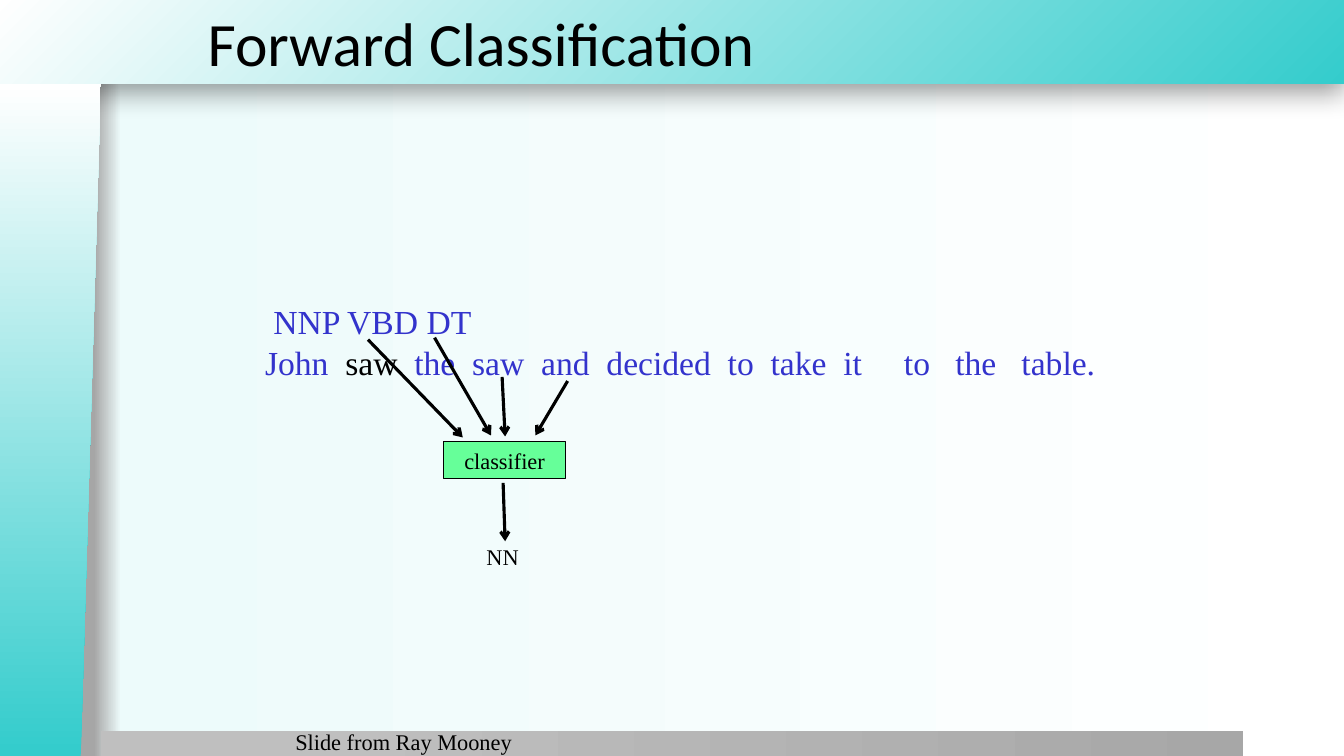
from lxml.etree import SubElement as Sub
from pptx import Presentation
from pptx.dml.color import RGBColor
from pptx.enum.shapes import MSO_CONNECTOR as Conn, MSO_SHAPE as Shape
from pptx.enum.text import MSO_ANCHOR as Anchor, MSO_AUTO_SIZE as Auto, PP_ALIGN as Align
from pptx.oxml.ns import qn
from pptx.util import Inches, Pt

BLACK, BLUE, TEAL, WHITE = "000000", "3333CC", "34CCCC", "FFFFFF"
SERIF, SANS = "Times New Roman", "Calibri"


def color(code):
    return RGBColor.from_string(code)


class Board:
    """Holds the current slide and its style."""

    def __init__(self, slide, font=SERIF, size=16):
        self.slide, self.shapes = slide, slide.shapes
        self.font, self.size = font, size

    def grade(self, fill, host, stops, focus=None):
        """Fill with a gradient; focus gives left and top of a round one."""
        fill.solid()
        solid = host.find(qn("a:solidFill"))
        grad = solid.makeelement(qn("a:gradFill"), {"rotWithShape": "1"})
        host.replace(solid, grad)
        row = Sub(grad, qn("a:gsLst"))
        for pos, code in stops:
            stop = Sub(row, qn("a:gs"), pos=str(pos * 1000))
            Sub(stop, qn("a:srgbClr"), val=code)
        if focus:
            ring = Sub(grad, qn("a:path"), {"path": "circle"})
            left, top = (str(n * 1000) for n in focus)
            Sub(ring, qn("a:fillToRect"), l=left, t=top)
        else:
            Sub(grad, qn("a:lin"), ang="0", scaled="0")

    def backdrop(self, stops):
        fill = self.slide.background.fill
        fill.solid()
        host = self.slide._element.find(".//" + qn("p:bgPr"))
        self.grade(fill, host, stops)

    def block(self, at, kind=Shape.RECTANGLE):
        box = self.shapes.add_shape(kind, *map(Inches, at))
        box.shadow.inherit = False
        box.line.fill.background()
        return box

    def band(self, at, stops, kind=Shape.RECTANGLE, focus=None):
        box = self.block(at, kind)
        self.grade(box.fill, box._element.spPr, stops, focus)
        return box

    def shade(self, box, alpha, blur, dist):
        """Drop a black shadow straight down."""
        effects = box._element.spPr.find(qn("a:effectLst"))
        drop = Sub(effects, qn("a:outerShdw"), blurRad=str(Pt(blur)),
                   dist=str(Pt(dist)), dir="5400000", rotWithShape="0")
        tone = Sub(drop, qn("a:srgbClr"), val=BLACK)
        Sub(tone, qn("a:alpha"), val=str(alpha * 1000))

    def letter(self, box, lines, size=None, font=None, align=Align.LEFT,
               anchor=Anchor.TOP, wrap=True):
        """Each line is a list of (text, color) pairs."""
        frame = box.text_frame
        frame.word_wrap, frame.auto_size = wrap, Auto.NONE
        frame.vertical_anchor = anchor
        for i, line in enumerate(lines):
            para = frame.add_paragraph() if i else frame.paragraphs[0]
            para.alignment = align
            for text, code in line:
                run = para.add_run()
                run.text = text
                run.font.name = font or self.font
                run.font.size = Pt(size or self.size)
                run.font.color.rgb = color(code)

    def text(self, at, lines, **style):
        self.letter(self.shapes.add_textbox(*map(Inches, at)), lines, **style)

    def node(self, at, label, fill):
        box = self.block(at)
        box.fill.solid()
        box.fill.fore_color.rgb = color(fill)
        box.line.color.rgb = color(BLACK)
        box.line.width = Pt(1)
        self.letter(box, [[(label, BLACK)]], align=Align.CENTER, anchor=Anchor.MIDDLE)

    def arrow(self, *ends):
        link = self.shapes.add_connector(Conn.STRAIGHT, *map(Inches, ends))
        link.line.color.rgb = color(BLACK)
        link.line.width = Pt(2.25)
        props = link._element.spPr
        Sub(props.find(qn("a:ln")), qn("a:tailEnd"), type="arrow")
        Sub(props, qn("a:effectLst"))


def main():
    deck = Presentation()
    deck.slide_width, deck.slide_height = Inches(13.33), Inches(7.5)
    board = Board(deck.slides.add_slide(deck.slide_layouts[6]))

    # Backdrop, header, footer and side bands
    board.backdrop([(7, "A6A6A6"), (9, "EDFBFB"), (100, WHITE)])
    head = board.band((-0.01, 0, 13.34, 0.83), [(0, TEAL), (100, WHITE)],
                      focus=(100, 100))
    board.shade(head, alpha=40, blur=20, dist=6)
    board.band((1, 7.25, 11.33, 0.26), [(20, "BFBFBF"), (100, "A7A7A7")])
    side = board.band((-2.84, 3.67, 6.68, 1), [(1, TEAL), (100, WHITE)],
                      Shape.FLOWCHART_MANUAL_INPUT)
    side.rotation = 270
    side._element.spPr.xfrm.set("flipV", "1")

    # Title
    board.text((1.96, 0, 11.38, 0.83), [[("Forward Classification", BLACK)]],
               size=44, font=SANS, anchor=Anchor.MIDDLE)

    # Tagged sentence
    board.text((2.53, 2.94, 8.51, 0.91), [
        [(" NNP VBD DT", BLUE)],
        [("John  ", BLUE), ("saw ", BLACK),
         (" the  saw  and  decided  to  take  it     to   the   table.", BLUE)],
    ], size=24, wrap=False)

    # Classifier with its inputs and output
    board.node((4.4, 4.38, 1.21, 0.37), "classifier", "66FF99")
    for ends in [(3.65, 3.37, 4.59, 4.34), (4.31, 3.35, 4.87, 4.32),
                 (4.98, 3.74, 5.01, 4.33), (5.63, 3.78, 5.31, 4.32),
                 (4.99, 4.79, 5.01, 5.37)]:
        board.arrow(*ends)
    board.text((4.68, 5.34, 0.61, 0.37), [[("NN", BLACK)]], align=Align.CENTER)

    # Credit
    board.text((2.83, 7.17, 3.42, 0.25), [[("Slide from Ray Mooney", BLACK)]])

    deck.save("out.pptx")


if __name__ == "__main__":
    main()
